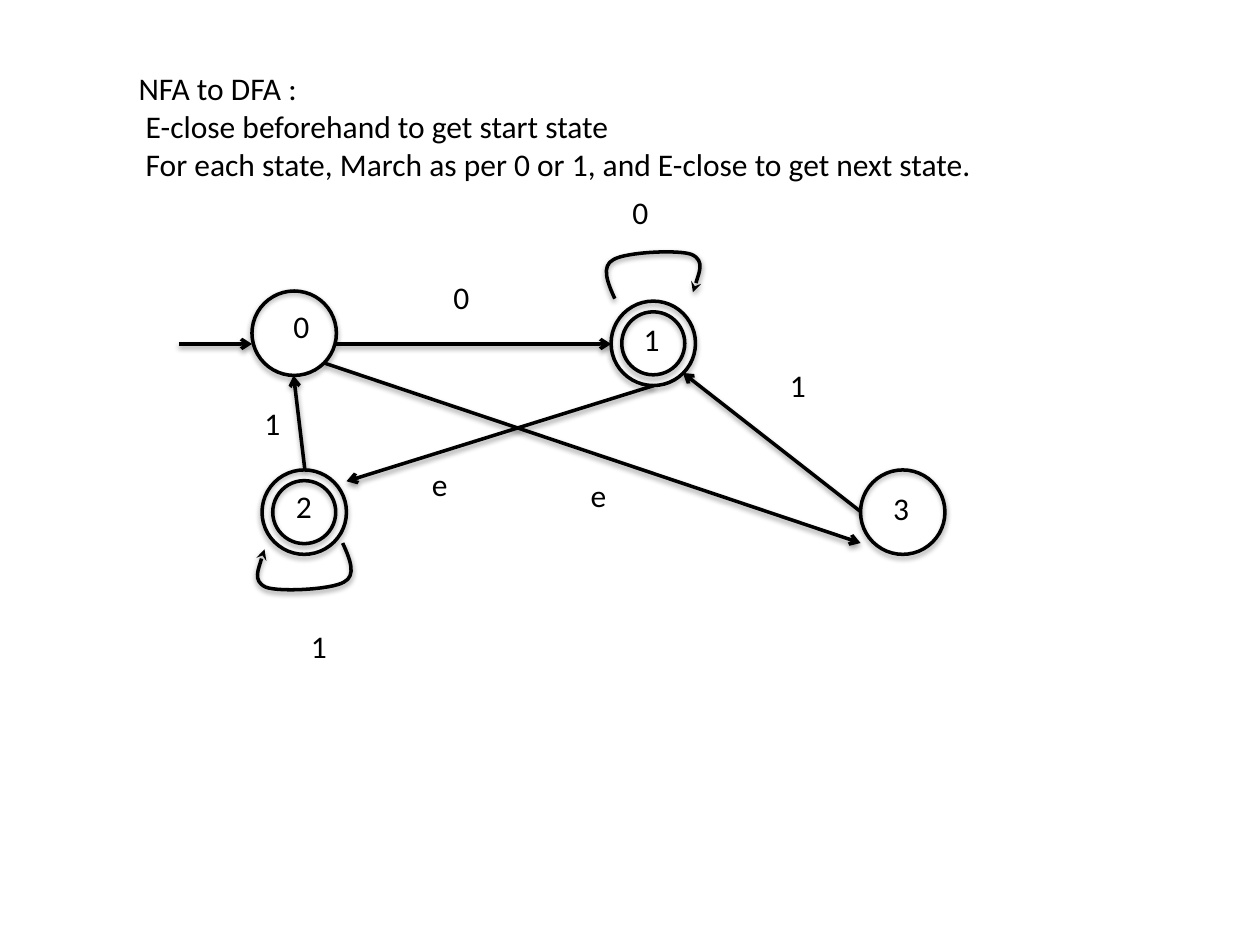
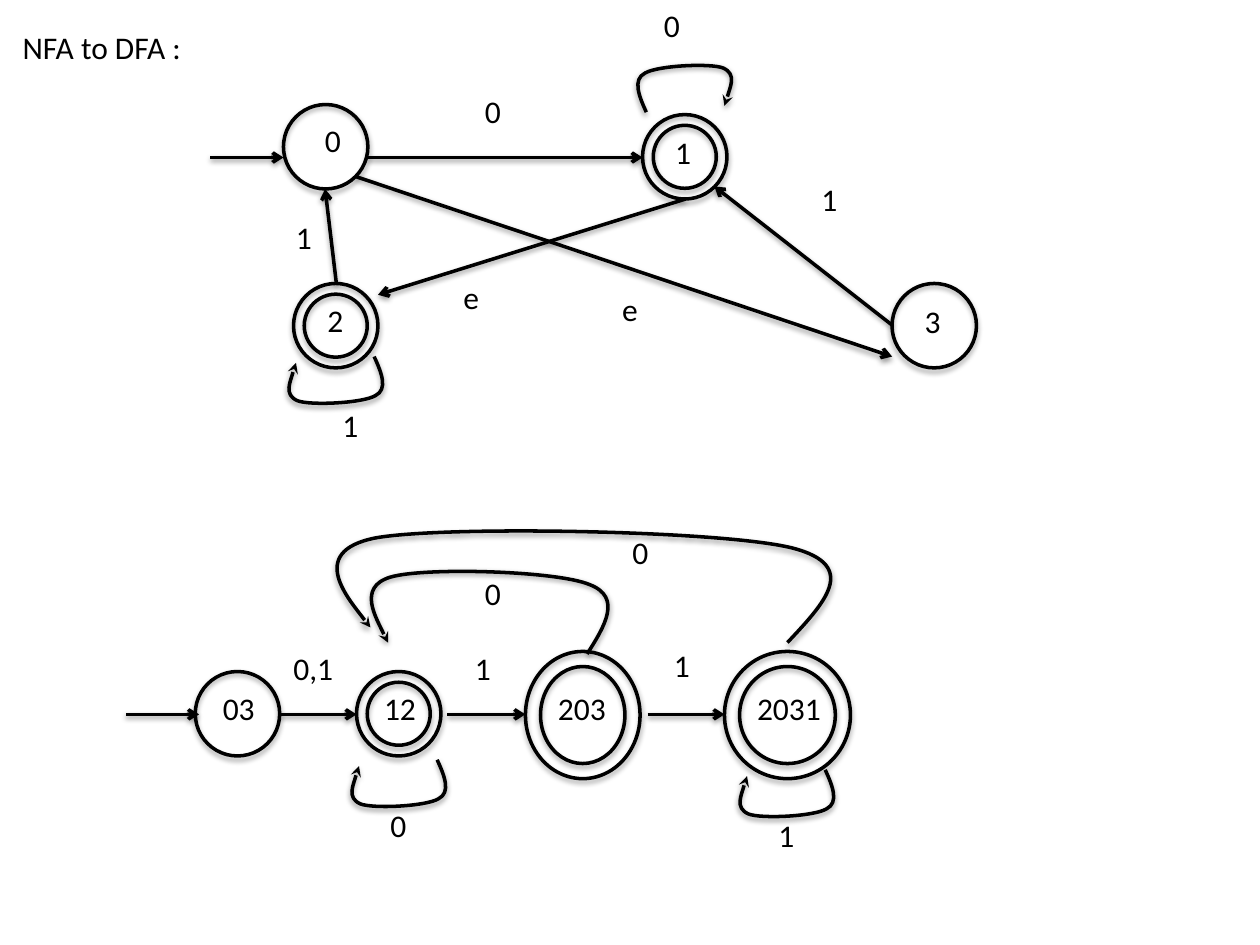
from typing import NamedTuple

from lxml.etree import SubElement
from pptx import Presentation
from pptx.dml.color import RGBColor
from pptx.enum.shapes import MSO_CONNECTOR, MSO_SHAPE
from pptx.enum.text import MSO_ANCHOR, MSO_AUTO_SIZE, PP_ALIGN
from pptx.oxml.ns import qn
from pptx.util import Inches, Pt

BLACK = RGBColor(0x00, 0x00, 0x00)
FONT = "Calibri"
FONT_SIZE = Pt(18)
LINE_WIDTH = Pt(2)
ELLIPSE = MSO_SHAPE.OVAL
STRAIGHT = MSO_CONNECTOR.STRAIGHT
LEFT = PP_ALIGN.LEFT
TOP = MSO_ANCHOR.TOP
FIT_SHAPE = MSO_AUTO_SIZE.SHAPE_TO_FIT_TEXT
NO_AUTO_SIZE = MSO_AUTO_SIZE.NONE
TITLE_ONLY = 5
TEXT_HEIGHT = 0.4

Point = tuple[float, float]


class Label(NamedTuple):
    text: str
    left: float
    top: float


class State(NamedTuple):
    label: Label
    left: float
    top: float
    width: float = 0.67
    height: float = 0.67
    inset: float = 0  # gap to the inner ring of an accepting state


class Arrow(NamedTuple):
    start: Point
    end: Point


# The NFA that both slides show
NFA_STATES = [
    State(Label("1", 5.01, 2.49), 4.85, 2.39, inset=0.085),
    State(Label("0", 2.23, 2.39), 2, 2.31),
    State(Label("2", 2.25, 3.82), 2.08, 3.73, inset=0.085),
    State(Label("3", 6.99, 3.83), 6.83, 3.73),
]
NFA_ARROWS = [
    Arrow((1.42, 2.73), (2, 2.73)),
    Arrow((2.67, 2.73), (4.85, 2.73)),
    Arrow((5.19, 3.06), (2.75, 3.82)),
    Arrow((6.83, 4.06), (5.42, 2.96)),
    Arrow((2.57, 2.88), (6.83, 4.31)),
    Arrow((2.42, 3.73), (2.33, 2.98)),
]
NFA_LABELS = [
    Label("e", 3.33, 3.64), Label("e", 4.59, 3.73), Label("0", 4.92, 1.48),
    Label("1", 6.17, 2.86), Label("0", 3.5, 2.16), Label("1", 2, 3.16),
]

# The DFA of the second slide
DFA_STATES = [
    State(Label("03", 1.67, 5.42), 1.55, 5.33),
    State(Label("12", 2.95, 5.42), 2.83, 5.33, inset=0.085),
    State(Label("203", 4.33, 5.42), 4.17, 5.17, 0.91, 1.01, 0.12),
    State(Label("2031", 5.91, 5.42), 5.75, 5.17, 1, 1.01, 0.12),
]
DFA_ARROWS = [
    Arrow((start, 5.67), (end, 5.67))
    for start, end in [(1, 1.58), (2.22, 2.83), (3.55, 4.17), (5.14, 5.75)]
]
DFA_LABELS = [
    Label("0,1", 2.23, 5.1), Label("1", 3.67, 5.1), Label("1", 5.25, 5.08),
    Label("0", 3, 6.35), Label("1", 6.08, 6.43),
    Label("0", 3.75, 4.51), Label("0", 4.92, 4.18),
]
DFA_LOOPS = [(2.75, 6.03), (5.83, 6.11)]
DFA_RETURNS = [
    [(4.66, 5.19), (4.8, 4.97), (4.94, 4.74), (4.68, 4.64), (4.42, 4.53),
     (3.37, 4.5), (3.1, 4.58), (2.83, 4.66), (3.08, 5.1), (3.08, 5.1)],
    [(6.25, 5.1), (6.54, 4.79), (6.83, 4.49), (6.29, 4.35), (5.74, 4.21),
     (3.53, 4.17), (2.98, 4.27), (2.42, 4.38), (2.94, 4.98), (2.94, 4.98)],
]

# Bezier points of a self-loop, hanging below its state
LOOP_WIDTH, LOOP_HEIGHT = 0.83, 0.39
LOOP = [(0.72, 0), (0.78, 0.13), (0.83, 0.26), (0.73, 0.31), (0.63, 0.37),
        (0.21, 0.39), (0.11, 0.35), (0, 0.3), (0.1, 0.05), (0.1, 0.05)]


def style_outline(shape, opacity: int, distance: float, head: str = "") -> None:
    """Black line, soft shadow below, and an optional arrowhead."""
    shape.line.color.rgb = BLACK
    shape.line.width = LINE_WIDTH
    properties = shape.element.spPr
    if head:
        SubElement(properties.find(qn("a:ln")), qn("a:tailEnd"), type=head)
    effects = SubElement(properties, qn("a:effectLst"))
    shadow = SubElement(effects, qn("a:outerShdw"), blurRad=str(Pt(3.1)),
                        dist=str(Pt(distance)), dir="5400000", rotWithShape="0")
    color = SubElement(shadow, qn("a:srgbClr"), val=str(BLACK))
    SubElement(color, qn("a:alpha"), val=str(opacity * 1000))


def style_text(frame) -> None:
    frame.word_wrap = False
    for para in frame.paragraphs:
        para.alignment = LEFT
        for span in para.runs:
            span.font.name = FONT
            span.font.size = FONT_SIZE
            span.font.color.rgb = BLACK


def add_label(slide, label: Label, dx: float = 0, dy: float = 0) -> None:
    characters = len(label.text) - label.text.count(",") / 2
    box = slide.shapes.add_textbox(
        Inches(label.left + dx), Inches(label.top + dy),
        Inches(0.2 + 0.13 * characters), Inches(TEXT_HEIGHT))
    box.text_frame.text = label.text
    box.text_frame.auto_size = FIT_SHAPE
    style_text(box.text_frame)


def add_state(slide, state: State, dx: float = 0, dy: float = 0) -> None:
    shapes = slide.shapes
    insets = [0]
    if state.inset:
        shapes = shapes.add_group_shape().shapes
        insets.append(state.inset)
    for inset in insets:
        ring = shapes.add_shape(
            ELLIPSE, Inches(state.left + dx + inset), Inches(state.top + dy + inset),
            Inches(state.width - 2 * inset), Inches(state.height - 2 * inset))
        ring.fill.background()
        style_outline(ring, 35, 1.8)
    add_label(slide, state.label, dx, dy)


def add_arrow(slide, arrow: Arrow, dx: float = 0, dy: float = 0) -> None:
    (x1, y1), (x2, y2) = arrow
    line = slide.shapes.add_connector(
        STRAIGHT, Inches(x1 + dx), Inches(y1 + dy), Inches(x2 + dx), Inches(y2 + dy))
    style_outline(line, 38, 1.6, "arrow")


def add_curve(slide, points: list[Point]) -> None:
    """Draw a start point followed by triples of Bezier points."""
    start, *rest = [(Inches(x), Inches(y)) for x, y in points]
    builder = slide.shapes.build_freeform(*start, scale=1.0)
    builder.add_line_segments(rest, close=False)
    curve = builder.convert_to_shape()
    # Turn each three straight segments into one cubic segment
    outline = curve.element.spPr.find(".//" + qn("a:path"))
    segments = outline.findall(qn("a:lnTo"))
    for first in range(0, len(segments), 3):
        cubic = SubElement(outline, qn("a:cubicBezTo"))
        for segment in segments[first:first + 3]:
            cubic.append(segment[0])
            outline.remove(segment)
    curve.fill.background()
    style_outline(curve, 38, 1.6, "stealth")


def add_loop(slide, left: float, top: float, above: bool = False) -> None:
    points = LOOP
    if above:
        points = [(LOOP_WIDTH - x, LOOP_HEIGHT - y) for x, y in LOOP]
    add_curve(slide, [(left + x, top + y) for x, y in points])


def add_heading(slide, lines: list[str], left: float, top: float,
                width: float, height: float) -> None:
    title = slide.shapes.title
    title.left, title.top = Inches(left), Inches(top)
    title.width, title.height = Inches(width), Inches(height)
    frame = title.text_frame
    frame.text = "\n".join(lines)
    frame.vertical_anchor = TOP
    frame.auto_size = NO_AUTO_SIZE
    style_text(frame)


def add_automaton(slide, states: list[State], arrows: list[Arrow],
                  labels: list[Label], dx: float = 0, dy: float = 0) -> None:
    for state in states:
        add_state(slide, state, dx, dy)
    for arrow in arrows:
        add_arrow(slide, arrow, dx, dy)
    for label in labels:
        add_label(slide, label, dx, dy)


def add_nfa(slide, loop_label_top: float, dx: float = 0, dy: float = 0) -> None:
    add_automaton(slide, NFA_STATES, NFA_ARROWS, NFA_LABELS, dx, dy)
    add_loop(slide, 2 + dx, 4.31 + dy)
    add_loop(slide, 4.77 + dx, 1.98 + dy, above=True)
    add_label(slide, Label("1", 2.37 + dx, loop_label_top))


def main() -> None:
    deck = Presentation()
    deck.slide_width, deck.slide_height = Inches(10), Inches(7.5)
    layout = deck.slide_layouts[TITLE_ONLY]

    # Slide 1: the method and the NFA
    slide = deck.slides.add_slide(layout)
    add_heading(slide, [
        "NFA to DFA :",
        " E-close beforehand to get start state",
        " For each state, March as per 0 or 1, and E-close to get next state.",
    ], 1, 0.5, 6.87, 1.01)
    add_nfa(slide, 4.93)

    # Slide 2: the NFA above the DFA made from it
    slide = deck.slides.add_slide(layout)
    add_heading(slide, ["NFA to DFA :"], 0.08, 0.17, 1.47, TEXT_HEIGHT)
    add_nfa(slide, 3.17, 0.25, -1.48)
    add_automaton(slide, DFA_STATES, DFA_ARROWS, DFA_LABELS)
    for left, top in DFA_LOOPS:
        add_loop(slide, left, top)
    for points in DFA_RETURNS:
        add_curve(slide, points)

    deck.save("out.pptx")


if __name__ == "__main__":
    main()
